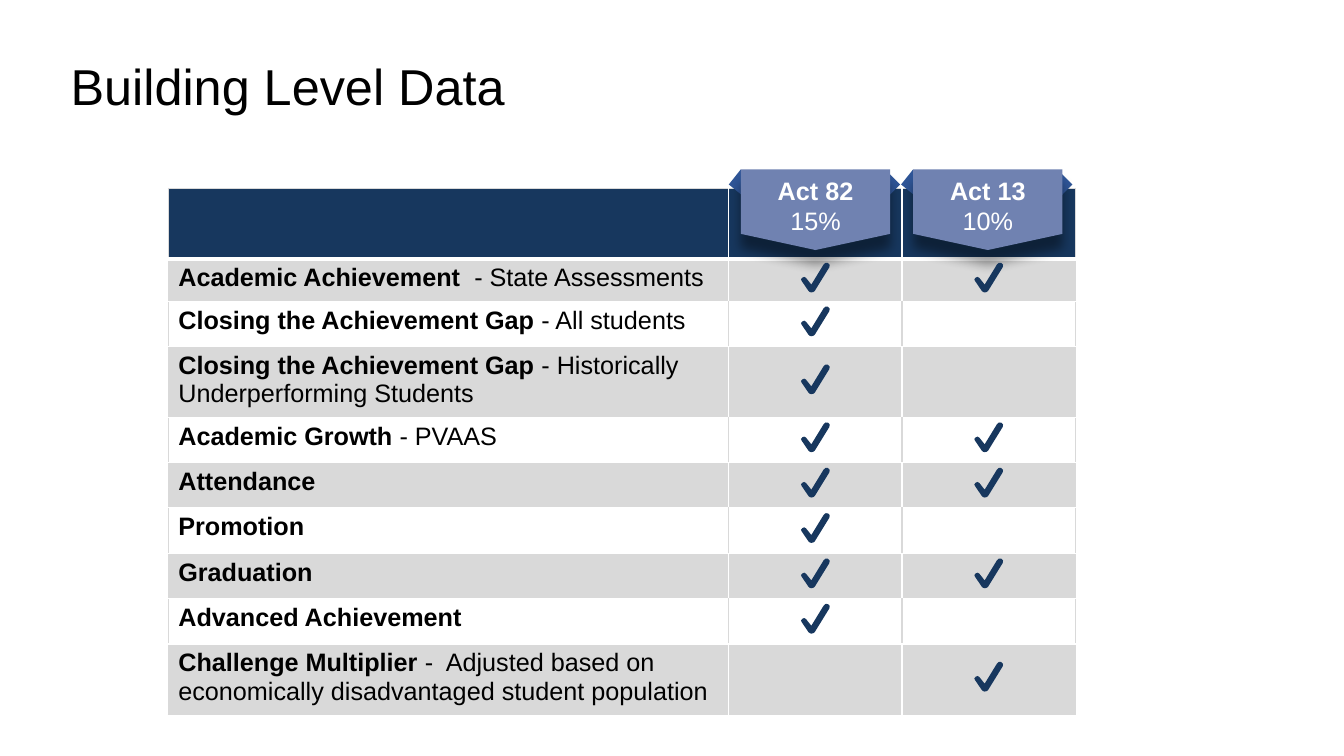
from lxml.etree import SubElement
from pptx import Presentation
from pptx.dml.color import RGBColor
from pptx.enum.shapes import MSO_SHAPE
from pptx.enum.text import MSO_ANCHOR, PP_ALIGN
from pptx.oxml.ns import qn
from pptx.util import Pt

TITLE = "Building Level Data"
ACTS = [("Act 82", "15%"), ("Act 13", "10%")]
# measure, detail, counts for each act
ROWS = [
    ("Academic Achievement ", " - State Assessments", (True, True)),
    ("Closing the Achievement Gap ", "- All students", (True, False)),
    ("Closing the Achievement Gap ",
     "- Historically Underperforming Students", (True, False)),
    ("Academic Growth ", "- PVAAS", (True, True)),
    ("Attendance", "", (True, True)),
    ("Promotion", "", (True, False)),
    ("Graduation", "", (True, True)),
    ("Advanced Achievement", "", (True, False)),
    ("Challenge Multiplier ",
     "-  Adjusted based on economically disadvantaged student population",
     (False, True)),
]

NAVY = RGBColor(0x17, 0x37, 0x5E)
GRAY = RGBColor(0xD9, 0xD9, 0xD9)
WHITE = RGBColor(0xFF, 0xFF, 0xFF)
BLACK = RGBColor(0, 0, 0)
TAG = RGBColor(0x70, 0x82, 0xB1)
FOLD = RGBColor(0x2F, 0x55, 0x97)

LEFT, TOP = 120.2, 134.6
WIDTHS = [400.3, 123.8, 123.8]
HEIGHTS = [50.4, 30.2, 32.4, 50.4, 32.4, 32.4, 32.4, 32.4, 32.4, 50.4]
TAG_X, TAG_Y, TAG_W, TAG_H, TAG_STEP = 529.2, 121, 106.6, 57.6, 123.1
FOLDS = [
    [(0, 0), (2, 19.4), (-8.6, 10.8)],
    [(103.7, 0.7), (103.7, 20.9), (113.8, 10.8)],
]
CHECK_W, CHECK_H, CHECK_LIFT = 20.9, 21.6, 2
CHECK = [
    (7.6, 21.6), (6.5, 21.3), (5.6, 20.6), (0.7, 13.4), (0.2, 12.2),
    (1.2, 11), (2.5, 10.5), (3.8, 11.2), (7.6, 16), (16.4, 1.6),
    (17.8, 0.4), (19.4, 0.5), (20.7, 1.8), (20.5, 3.6), (10, 20.6),
    (9, 21.3),
]


def style(font, color, bold=False, size=18):
    font.name, font.size, font.bold = "Arial", Pt(size), bold
    font.color.rgb = color


def outline(shapes, points, x, y, color):
    """Draw a filled outline whose points are offsets from x, y."""
    spots = [(Pt(x + dx), Pt(y + dy)) for dx, dy in points]
    pen = shapes.build_freeform(*spots[0])
    pen.add_line_segments(spots[1:])
    shape = pen.convert_to_shape()
    shape.shadow.inherit = False
    shape.fill.solid()
    shape.fill.fore_color.rgb = color
    shape.line.fill.background()


def edge(cell, side, color, width):
    line = SubElement(cell._tc.get_or_add_tcPr(), qn("a:" + side),
                      w=str(Pt(width)))
    fill = SubElement(line, qn("a:solidFill"))
    SubElement(fill, qn("a:srgbClr"), val=str(color))


def paint(cell, row, col):
    """Set borders, then fill, of one table cell."""
    shaded = row == 0 or row % 2 == 1
    inner = WHITE if shaded else GRAY
    edge(cell, "lnL", inner if col else GRAY, 1)
    edge(cell, "lnR", inner if col < len(WIDTHS) - 1 else GRAY, 1)
    edge(cell, "lnT", WHITE if row else GRAY, 1)
    edge(cell, "lnB", WHITE if row < len(ROWS) else GRAY, 1 if row else 3)
    cell.fill.solid()
    cell.fill.fore_color.rgb = (
        NAVY if row == 0 else GRAY if shaded else WHITE)


def add_grid(shapes):
    frame = shapes.add_table(len(HEIGHTS), len(WIDTHS), Pt(LEFT), Pt(TOP),
                             Pt(sum(WIDTHS)), Pt(sum(HEIGHTS)))
    table = frame.table
    for col, width in enumerate(WIDTHS):
        table.columns[col].width = Pt(width)
    for row, height in enumerate(HEIGHTS):
        table.rows[row].height = Pt(height)
        for col in range(len(WIDTHS)):
            paint(table.cell(row, col), row, col)
    for row, (name, detail, _) in enumerate(ROWS, 1):
        para = table.cell(row, 0).text_frame.paragraphs[0]
        for text, bold in ((name, True), (detail, False)):
            if text:
                run = para.add_run()
                run.text = text
                style(run.font, BLACK, bold)


def add_checks(shapes):
    for row, (_, _, marks) in enumerate(ROWS, 1):
        mid = TOP + sum(HEIGHTS[:row]) + HEIGHTS[row] / 2
        for col, mark in enumerate(marks, 1):
            if mark:
                x = LEFT + sum(WIDTHS[:col]) + (WIDTHS[col] - CHECK_W) / 2
                y = mid - CHECK_H / 2 - CHECK_LIFT
                outline(shapes, CHECK, x, y, NAVY)


def add_tag(shapes, x, lines):
    group = shapes.add_group_shape().shapes
    for fold in FOLDS:
        outline(group, fold, x, TAG_Y, FOLD)
    tag = group.add_shape(MSO_SHAPE.FLOWCHART_OFFPAGE_CONNECTOR,
                          Pt(x), Pt(TAG_Y), Pt(TAG_W), Pt(TAG_H))
    tag.fill.solid()
    tag.fill.fore_color.rgb = TAG
    tag.line.fill.background()
    tag.shadow.inherit = False
    effects = tag._element.spPr.find(qn("a:effectLst"))
    shade = SubElement(effects, qn("a:outerShdw"), blurRad=str(Pt(8)),
                       dist=str(Pt(10)), dir="5400000", rotWithShape="0")
    color = SubElement(shade, qn("a:srgbClr"), val=str(BLACK))
    SubElement(color, qn("a:alpha"), val="40000")
    frame = tag.text_frame
    frame.text = "\n".join(lines)
    frame.vertical_anchor = MSO_ANCHOR.TOP
    frame.margin_top, frame.margin_bottom = Pt(4), 0
    for para, bold in zip(frame.paragraphs, (True, False)):
        para.alignment = PP_ALIGN.CENTER
        style(para.runs[0].font, WHITE, bold)


def main():
    deck = Presentation()
    deck.slide_width, deck.slide_height = Pt(960), Pt(540)
    slide = deck.slides.add_slide(deck.slide_layouts[5])
    title = slide.shapes.title
    title.left, title.top = Pt(43.2), Pt(11.5)
    title.width, title.height = Pt(828), Pt(104.4)
    title.text_frame.text = TITLE
    title.text_frame.vertical_anchor = MSO_ANCHOR.MIDDLE
    para = title.text_frame.paragraphs[0]
    para.alignment, para.line_spacing = PP_ALIGN.LEFT, 0.9
    style(para.runs[0].font, BLACK, size=36)

    add_grid(slide.shapes)
    for i, lines in enumerate(ACTS):
        add_tag(slide.shapes, TAG_X + i * TAG_STEP, lines)
    add_checks(slide.shapes)
    deck.save("out.pptx")


if __name__ == "__main__":
    main()
